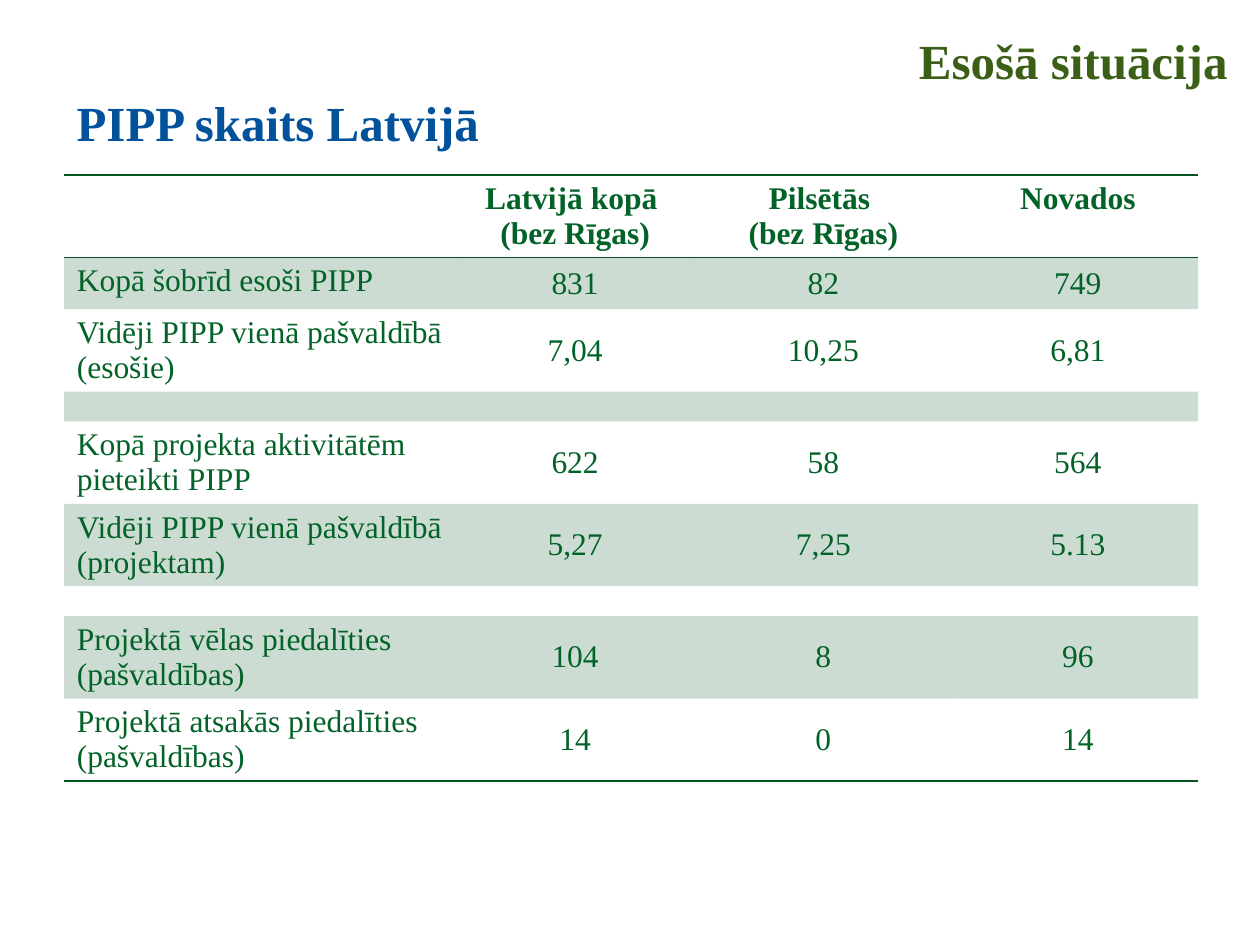
from dataclasses import dataclass

import pptx
import pptx.dml.color
import pptx.enum.text
import pptx.oxml.ns
import pptx.util
from lxml import etree

Inches, Pt = pptx.util.Inches, pptx.util.Pt
RGBColor = pptx.dml.color.RGBColor
ALIGN, ANCHOR = pptx.enum.text.PP_ALIGN, pptx.enum.text.MSO_ANCHOR
qn = pptx.oxml.ns.qn

BLUE = RGBColor(0x02, 0x52, 0x9B)
OLIVE = RGBColor(0x3C, 0x5F, 0x18)
GREEN = RGBColor(0x02, 0x62, 0x27)
DARK_GREEN = RGBColor(0x01, 0x53, 0x20)
FONT = "Times New Roman"
NO_STYLE = "{2D5ABB26-0587-4C30-8999-92F81FD0307C}"


@dataclass
class Heading:
    text: str
    left: float
    top: float
    width: float
    color: RGBColor
    align: ALIGN
    anchor: ANCHOR


@dataclass
class Row:
    cells: tuple[str, ...]
    height: float = 0.65


HEADINGS = [
    Heading("PIPP skaits Latvijā", 0.51, 0.13, 4.33, BLUE, ALIGN.LEFT, ANCHOR.BOTTOM),
    Heading("Esošā situācija", 5.55, 0.19, 4.29, OLIVE, ALIGN.RIGHT, ANCHOR.TOP),
]
COLUMN_WIDTHS = [3.15, 1.81, 2.13, 1.91]
SPACER = Row(("", "", "", ""), 0.22)
ROWS = [
    Row(("", "Latvijā kopā \n(bez Rīgas)", "Pilsētās \n(bez Rīgas)", "Novados")),
    Row(("Kopā šobrīd esoši PIPP", "831", "82", "749"), 0.41),
    Row(("Vidēji PIPP vienā pašvaldībā (esošie)", "7,04", "10,25", "6,81")),
    SPACER,
    Row(("Kopā projekta aktivitātēm pieteikti PIPP", "622", "58", "564")),
    Row(("Vidēji PIPP vienā pašvaldībā (projektam)", "5,27", "7,25", "5.13")),
    SPACER,
    Row(("Projektā vēlas piedalīties (pašvaldības)", "104", "8", "96")),
    Row(("Projektā atsakās piedalīties (pašvaldības)", "14", "0", "14")),
]


def write_text(tf, text: str, align: ALIGN, color: RGBColor, size: float, bold: bool) -> None:
    tf.text = text
    for p in tf.paragraphs:
        p.alignment = align
        for r in p.runs:
            for name, value in {"name": FONT, "size": Pt(size), "bold": bold}.items():
                setattr(r.font, name, value)
            r.font.color.rgb = color


def add_heading(s, h: Heading) -> None:
    sp = s.shapes.add_textbox(Inches(h.left), Inches(h.top), Inches(h.width), Inches(1.12))
    sp.text_frame.word_wrap = True
    sp.text_frame.vertical_anchor = h.anchor
    write_text(sp.text_frame, h.text, h.align, h.color, 28, True)


def add_border(cell, side: str) -> None:
    """Draw a 1 pt rule on side "T" or "B"; call before filling the cell."""
    ln = etree.SubElement(cell._tc.get_or_add_tcPr(), qn(f"a:ln{side}"), w=str(Pt(1)))
    fill = etree.SubElement(ln, qn("a:solidFill"))
    etree.SubElement(fill, qn("a:srgbClr"), val=str(DARK_GREEN))


def fill_band(cell) -> None:
    """Fill with the dark green at 20 % opacity."""
    cell.fill.solid()
    cell.fill.fore_color.rgb = DARK_GREEN
    clr = cell._tc.tcPr.find(f"{qn('a:solidFill')}/{qn('a:srgbClr')}")
    etree.SubElement(clr, qn("a:alpha"), val="20000")


def add_count_table(s, rows: list[Row], widths: list[float]) -> None:
    height = sum(row.height for row in rows)
    frame = s.shapes.add_table(len(rows), len(widths), Inches(0.51), Inches(1.39),
                               Inches(sum(widths)), Inches(height))
    table = frame.table
    table.first_row = table.horz_banding = False
    table._tbl.tblPr.find(qn("a:tableStyleId")).text = NO_STYLE
    for column, width in zip(table.columns, widths):
        column.width = Inches(width)

    last = len(rows) - 1
    for i, row in enumerate(rows):
        table.rows[i].height = Inches(row.height)
        sides = {0: "TB", last: "B"}.get(i, "")
        for j, text in enumerate(row.cells):
            cell = table.cell(i, j)
            centred = j > 0
            write_text(cell.text_frame, text, ALIGN.CENTER if centred else ALIGN.LEFT,
                       GREEN, 18, i == 0)
            if i and centred:
                cell.vertical_anchor = ANCHOR.MIDDLE
            if row is SPACER:
                p = cell.text_frame.paragraphs[0]
                etree.SubElement(p._p, qn("a:endParaRPr"), sz="800")
            for side in sides:
                add_border(cell, side)
            if i % 2:
                fill_band(cell)


def main() -> None:
    prs = pptx.Presentation()
    prs.slide_width, prs.slide_height = Inches(10), Inches(7.5)
    s = prs.slides.add_slide(prs.slide_layouts[6])
    add_count_table(s, ROWS, COLUMN_WIDTHS)
    for heading in HEADINGS:
        add_heading(s, heading)
    prs.save("out.pptx")


if __name__ == "__main__":
    main()
